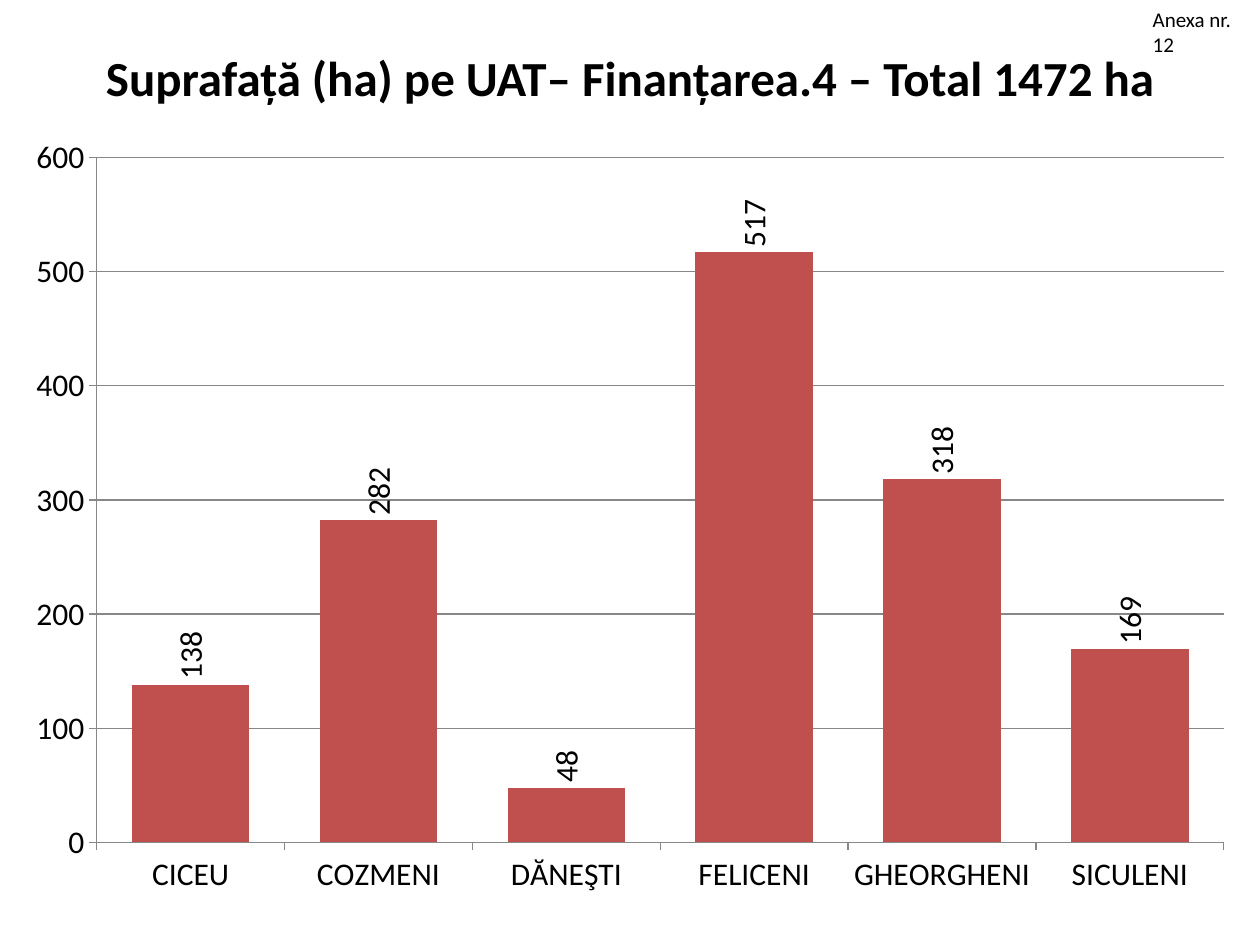
from dataclasses import dataclass

from lxml import etree
from pptx import Presentation
from pptx.chart.data import CategoryChartData
from pptx.dml.color import RGBColor
from pptx.enum.chart import XL_CHART_TYPE as ChartType
from pptx.enum.chart import XL_LABEL_POSITION as LabelPosition
from pptx.enum.chart import XL_TICK_MARK as TickMark
from pptx.enum.text import MSO_ANCHOR as Anchor
from pptx.enum.text import PP_ALIGN as Align
from pptx.oxml.ns import qn
from pptx.util import Inches, Pt


@dataclass(frozen=True)
class Theme:
    font: str = "Calibri"
    text: RGBColor = RGBColor(0, 0, 0)
    bar: RGBColor = RGBColor(0xC0, 0x50, 0x4D)
    grid: RGBColor = RGBColor(0x87, 0x87, 0x87)
    title_size: Pt = Pt(28)
    chart_size: Pt = Pt(18)
    note_size: Pt = Pt(12)
    line_width: Pt = Pt(0.75)


AREAS = {
    "CICEU": 138,
    "COZMENI": 282,
    "DĂNEŞTI": 48,
    "FELICENI": 517,
    "GHEORGHENI": 318,
    "SICULENI": 169,
}


class SlideBuilder:
    def __init__(self, slide, theme):
        self.slide = slide
        self.theme = theme

    def style_font(self, font, size, bold=False):
        font.name = self.theme.font
        font.size = size
        font.bold = bold
        font.color.rgb = self.theme.text

    def style_line(self, line):
        line.color.rgb = self.theme.grid
        line.width = self.theme.line_width

    def add_text(self, text, box, size, bold=False, align=Align.LEFT, anchor=Anchor.TOP):
        shape = self.slide.shapes.add_textbox(*map(Inches, box))
        frame = shape.text_frame
        frame.word_wrap = True
        frame.vertical_anchor = anchor
        paragraph = frame.paragraphs[0]
        paragraph.alignment = align
        run = paragraph.add_run()
        run.text = text
        self.style_font(run.font, size, bold)

    def add_column_chart(self, values, box, plot_layout):
        data = CategoryChartData(number_format="#,##0")
        data.categories = list(values)
        data.add_series("Series 1", list(values.values()))
        chart = self.slide.shapes.add_chart(
            ChartType.COLUMN_CLUSTERED, *map(Inches, box), data
        ).chart
        chart.has_legend = False
        chart.has_title = False
        self.style_font(chart.font, self.theme.chart_size)

        plot = chart.plots[0]
        plot.gap_width = 60
        plot.vary_by_categories = False
        fill = plot.series[0].format.fill
        fill.solid()
        fill.fore_color.rgb = self.theme.bar
        self.add_upright_labels(plot.series[0].data_labels)

        for axis in (chart.category_axis, chart.value_axis):
            axis.major_tick_mark = TickMark.OUTSIDE
            axis.minor_tick_mark = TickMark.NONE
            self.style_line(axis.format.line)
        value_axis = chart.value_axis
        value_axis.minimum_scale = 0
        value_axis.maximum_scale = 600
        value_axis.major_unit = 100
        value_axis.tick_labels.number_format = "#,##0"
        value_axis.tick_labels.number_format_is_linked = False
        value_axis.has_major_gridlines = True
        self.style_line(value_axis.major_gridlines.format.line)
        self.place_plot(chart, plot_layout)

    def add_upright_labels(self, labels):
        """Show values above the bars, turned to read upwards."""
        labels.show_value = True
        labels.number_format = "#,##0"
        labels.number_format_is_linked = False
        labels.position = LabelPosition.OUTSIDE_END
        self.style_font(labels.font, self.theme.chart_size)
        body = labels._element.find(qn("c:txPr")).find(qn("a:bodyPr"))
        body.set("rot", "-5400000")
        body.set("vert", "horz")

    def place_plot(self, chart, plot_layout):
        """Fix the inner plot area as fractions (x, y, w, h) of the chart."""
        plot_area = chart._chartSpace.chart.plotArea
        layout = plot_area.find(qn("c:layout"))
        if layout is None:
            layout = etree.Element(qn("c:layout"))
            plot_area.insert(0, layout)
        manual = etree.SubElement(layout, qn("c:manualLayout"))
        settings = [("layoutTarget", "inner"), ("xMode", "edge"), ("yMode", "edge")]
        settings += zip("xywh", plot_layout)
        for tag, value in settings:
            etree.SubElement(manual, qn(f"c:{tag}")).set("val", str(value))


def main():
    presentation = Presentation()
    presentation.slide_width = Inches(10)
    presentation.slide_height = Inches(7.5)
    theme = Theme()
    slide = presentation.slides.add_slide(presentation.slide_layouts[6])
    builder = SlideBuilder(slide, theme)
    builder.add_text(
        "Suprafață (ha) pe UAT– Finanțarea.4 – Total 1472 ha",
        (0.5, 0.3, 9, 0.62),
        theme.title_size,
        bold=True,
        align=Align.CENTER,
        anchor=Anchor.MIDDLE,
    )
    builder.add_column_chart(AREAS, (0.08, 1, 9.83, 6.25), (0.07, 0.04, 0.91, 0.87))
    builder.add_text("Anexa nr. 12", (9.05, 0, 0.95, 0.3), theme.note_size)
    presentation.save("out.pptx")


if __name__ == "__main__":
    main()
